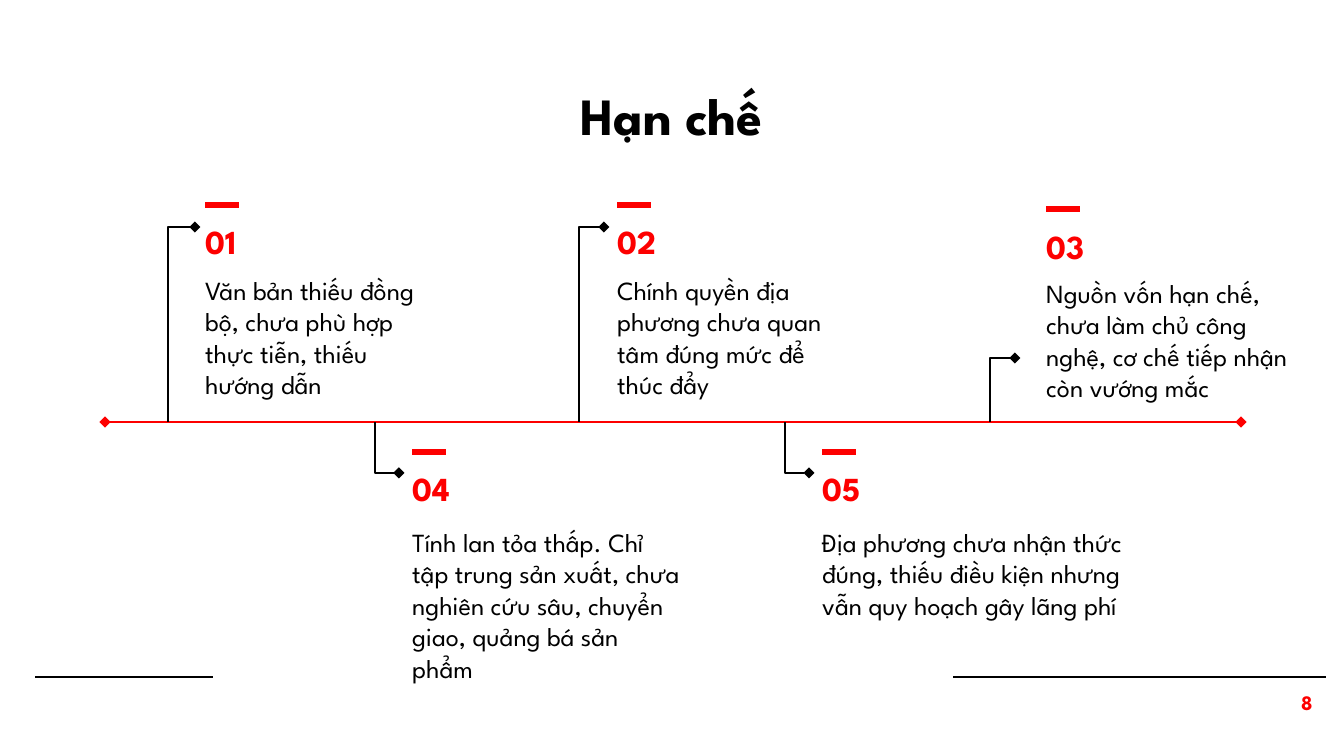
from lxml import etree
from pptx import Presentation, util as u
from pptx.dml.color import RGBColor
from pptx.enum import shapes, text
from pptx.oxml.ns import qn

PX = 914400 / 134.4
RED, BLACK = "FD0000", "000000"
FONT = "League Spartan"
AXIS_Y = 422


def write(shape, box, words, size, color=BLACK, bold=False, align=text.PP_ALIGN.LEFT):
    """Place a shape at a pixel box and fill it with formatted text."""
    for name, value in zip(("left", "top", "width", "height"), box):
        setattr(shape, name, round(value * PX))
    frame = shape.text_frame
    frame.text = words
    inset = u.Inches(0.1)
    frame_format = {"word_wrap": True, "auto_size": text.MSO_AUTO_SIZE.NONE,
                    "vertical_anchor": text.MSO_ANCHOR.TOP,
                    "margin_left": inset, "margin_right": inset,
                    "margin_top": inset, "margin_bottom": inset}
    for name, value in frame_format.items():
        setattr(frame, name, value)
    paragraph = frame.paragraphs[0]
    paragraph.alignment = align
    font = paragraph.runs[0].font
    for name, value in {"name": FONT, "size": u.Pt(size), "bold": bold}.items():
        setattr(font, name, value)
    font.color.rgb = RGBColor.from_string(color)


def connect(start, end, color, width, ends=(), bent=False):
    """Draw a straight or one-bend connector, with diamonds at the named ends."""
    kind = shapes.MSO_CONNECTOR.ELBOW if bent else shapes.MSO_CONNECTOR.STRAIGHT
    points = [round(value * PX) for value in (*start, *end)]
    connector = slide.shapes.add_connector(kind, *points)
    connector.line.color.rgb = RGBColor.from_string(color)
    connector.line.width = u.Pt(width)
    properties = connector._element.spPr
    if bent:
        properties.find(qn("a:prstGeom")).set("prst", "bentConnector2")
    for end_name in ends:
        etree.SubElement(connector.line._get_or_add_ln(), qn("a:" + end_name), type="diamond")
    etree.SubElement(properties, qn("a:effectLst"))


presentation = Presentation()
presentation.slide_width = round(1344 * PX)
presentation.slide_height = round(756 * PX)
slide = presentation.slides.add_slide(presentation.slide_layouts[5])

# Title and footer
write(slide.shapes.title, (216, 70, 911, 85), "Hạn chế", 28, bold=True,
      align=text.PP_ALIGN.CENTER)
for left, right in ((35, 213), (953, 1326)):
    connect((right, 677), (left, 677), BLACK, 0.75)
page_number = slide.shapes.add_textbox(0, 0, 0, 0)
write(page_number, (1240, 677, 86, 58), "8", 11, RED, True, text.PP_ALIGN.RIGHT)

# Timeline axis
connect((105, AXIS_Y), (1241, AXIS_Y), RED, 1.5, ("headEnd", "tailEnd"))

# Milestones: number, left, number top, body top, body size, branch start, branch x, text
milestones = [
    ("01", 192, 208, 261, (242, 134), (195, 227), 168,
     "Văn bản thiếu đồng bộ, chưa phù hợp thực tiễn, thiếu hướng dẫn"),
    ("02", 604, 208, 261, (242, 134), (604, 227), 579,
     "Chính quyền địa phương chưa quan tâm đúng mức để thúc đẩy"),
    ("03", 1033, 212, 264, (290, 134), (1015, 358), 990,
     "Nguồn vốn hạn chế, chưa làm chủ công nghệ, cơ chế tiếp nhận còn vướng mắc"),
    ("04", 399, 455, 513, (300, 163), (399, 473), 375,
     "Tính lan tỏa thấp. Chỉ tập trung sản xuất, chưa nghiên cứu sâu, "
     "chuyển giao, quảng bá sản phẩm"),
    ("05", 809, 455, 513, (344, 149), (809, 473), 785,
     "Địa phương chưa nhận thức đúng, thiếu điều kiện nhưng vẫn quy hoạch gây lãng phí"),
]
for number, left, top, body_top, body_size, branch, branch_x, body in milestones:
    connect(branch, (branch_x, AXIS_Y), BLACK, 0.75, ("headEnd",), bent=True)
    dash_y = top - 3
    connect((left + 47, dash_y), (left + 13, dash_y), RED, 3)
    label = slide.shapes.add_textbox(0, 0, 0, 0)
    write(label, (left, top, 242, 36), number, 18, RED, True)
    description = slide.shapes.add_textbox(0, 0, 0, 0)
    write(description, (left, body_top, *body_size), body, 14)

presentation.save("out.pptx")
